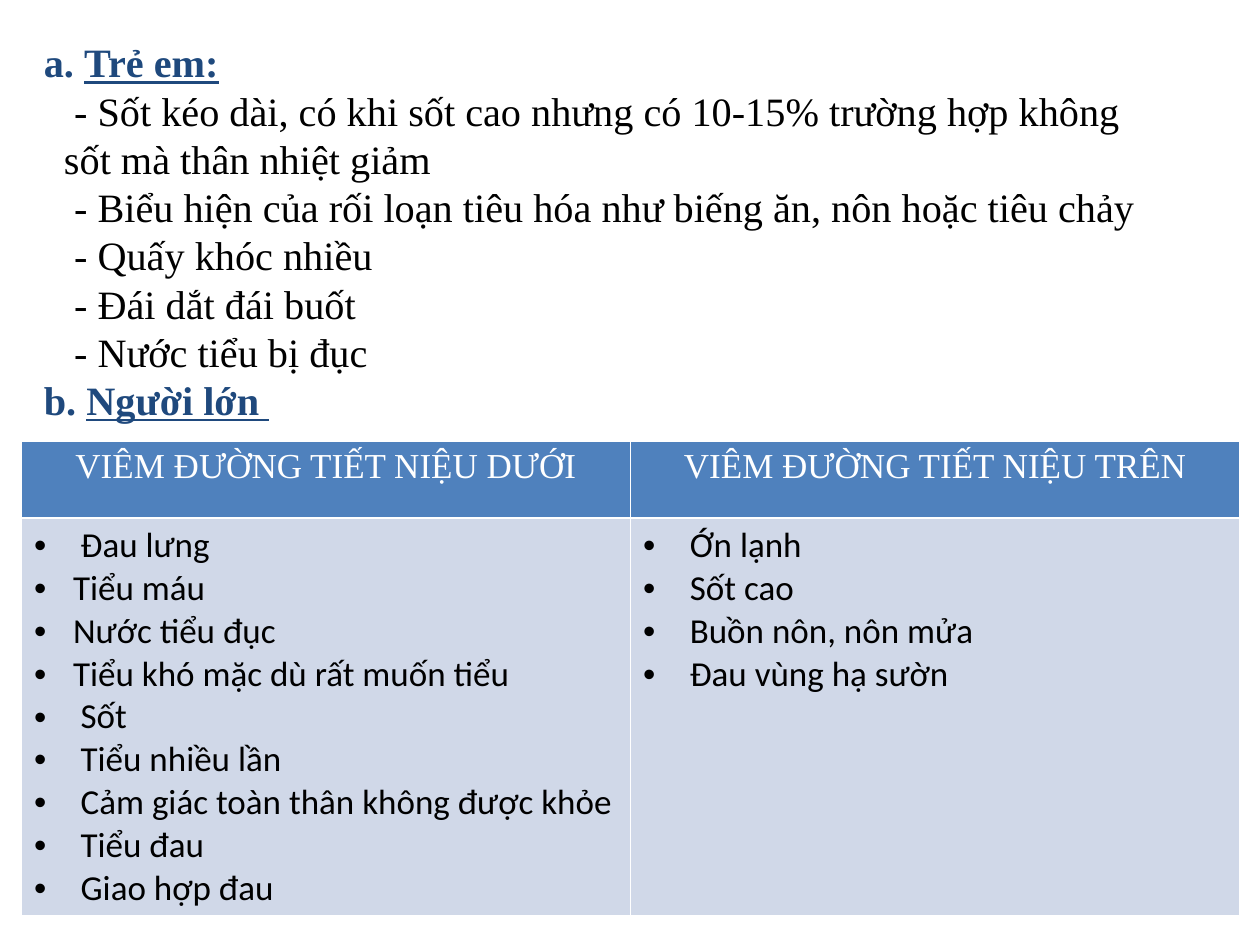
from lxml import etree
from pptx import Presentation
from pptx.dml.color import RGBColor
from pptx.enum.text import PP_ALIGN
from pptx.oxml.ns import qn
from pptx.util import Inches, Pt

CENTER = PP_ALIGN.CENTER
WIDTH, HEIGHT = 10, 7.5
SERIF, SANS = "Times New Roman", "Calibri"
NAVY, BLUE, PALE, WHITE, BLACK = "1F497D", "4F81BD", "D0D8E8", "FFFFFF", "000000"
NEAR, FAR = 0.31, 0.37

CHILD_SIGNS = [
    "- Sốt kéo dài, có khi sốt cao nhưng có 10-15% trường hợp không sốt mà thân nhiệt giảm",
    "- Biểu hiện của rối loạn tiêu hóa như biếng ăn, nôn hoặc tiêu chảy",
    "- Quấy khóc nhiều",
    "- Đái dắt đái buốt",
    "- Nước tiểu bị đục",
]
ADULT_SIGNS = {
    "VIÊM ĐƯỜNG TIẾT NIỆU DƯỚI": [
        ("Đau lưng", FAR),
        ("Tiểu máu", NEAR),
        ("Nước tiểu đục", NEAR),
        ("Tiểu khó mặc dù rất muốn tiểu", NEAR),
        ("Sốt", FAR),
        ("Tiểu nhiều lần", FAR),
        ("Cảm giác toàn thân không được khỏe", FAR),
        ("Tiểu đau", FAR),
        ("Giao hợp đau", FAR),
    ],
    "VIÊM ĐƯỜNG TIẾT NIỆU TRÊN": [
        ("Ớn lạnh", FAR),
        ("Sốt cao", FAR),
        ("Buồn nôn, nôn mửa", FAR),
        ("Đau vùng hạ sườn", FAR),
    ],
}


def color(value):
    """Turn a hex string into a colour."""
    return RGBColor.from_string(value)


def add_text(para, text, font=SERIF, size=20, fill=BLACK, bold=False, underline=False):
    """Add one formatted span of text to a paragraph."""
    span = para.add_run()
    span.text = text
    span.font.name = font
    span.font.size = Pt(size)
    span.font.bold = bold
    span.font.underline = underline
    span.font.color.rgb = color(fill)


def next_paragraph(frame):
    """Return the empty first paragraph, or a new one after the others."""
    first = frame.paragraphs[0]
    return frame.add_paragraph() if first.runs else first


def set_indent(para, margin, first_line, bullet=None):
    """Set the indents of a paragraph in inches, with an optional bullet."""
    properties = para._p.get_or_add_pPr()
    properties.set("marL", str(Inches(margin)))
    properties.set("indent", str(Inches(first_line)))
    if bullet:
        etree.SubElement(properties, qn("a:buFont"), typeface="Arial")
        etree.SubElement(properties, qn("a:buChar"), char=bullet)


def add_heading(frame, label, title):
    """Add a bold heading with an underlined title."""
    para = next_paragraph(frame)
    add_text(para, label, size=23, fill=NAVY, bold=True)
    add_text(para, title, size=23, fill=NAVY, bold=True, underline=True)


def add_signs_box(page):
    """Add the signs in children and the heading for adults."""
    box = page.shapes.add_textbox(
        Inches(0.025 * WIDTH), Inches(0.25), Inches(9.17), Inches(3.2))
    frame = box.text_frame
    frame.word_wrap = True
    frame.margin_right = Inches(0.2)
    add_heading(frame, "a. ", "Trẻ em:")
    for sign in CHILD_SIGNS:
        para = next_paragraph(frame)
        set_indent(para, 0.16, 0.08)
        add_text(para, sign, size=23)
    add_heading(frame, "b. ", "Người lớn ")


def fill_cell(cell, fill):
    """Give a table cell a solid fill and return its text frame."""
    cell.fill.solid()
    cell.fill.fore_color.rgb = color(fill)
    return cell.text_frame


def add_signs_table(page):
    """Add the table that compares lower and upper infections in adults."""
    rows = (0.61, 3.03)
    table = page.shapes.add_table(
        len(rows), len(ADULT_SIGNS), Inches(0.17), Inches(3.5),
        Inches(9.67), Inches(sum(rows))).table
    for row, height in zip(table.rows, rows):
        row.height = Inches(height)
    for column, (title, signs) in enumerate(ADULT_SIGNS.items()):
        header = fill_cell(table.cell(0, column), BLUE).paragraphs[0]
        header.alignment = CENTER
        add_text(header, title, fill=WHITE)
        frame = fill_cell(table.cell(1, column), PALE)
        for sign, margin in signs:
            para = next_paragraph(frame)
            set_indent(para, margin, -margin, bullet="•")
            add_text(para, sign, font=SANS)


def main():
    """Build the slide and save the deck."""
    deck = Presentation()
    deck.slide_width, deck.slide_height = Inches(WIDTH), Inches(HEIGHT)
    page = deck.slides.add_slide(deck.slide_layouts[6])
    add_signs_table(page)
    add_signs_box(page)
    deck.save("out.pptx")


if __name__ == "__main__":
    main()
